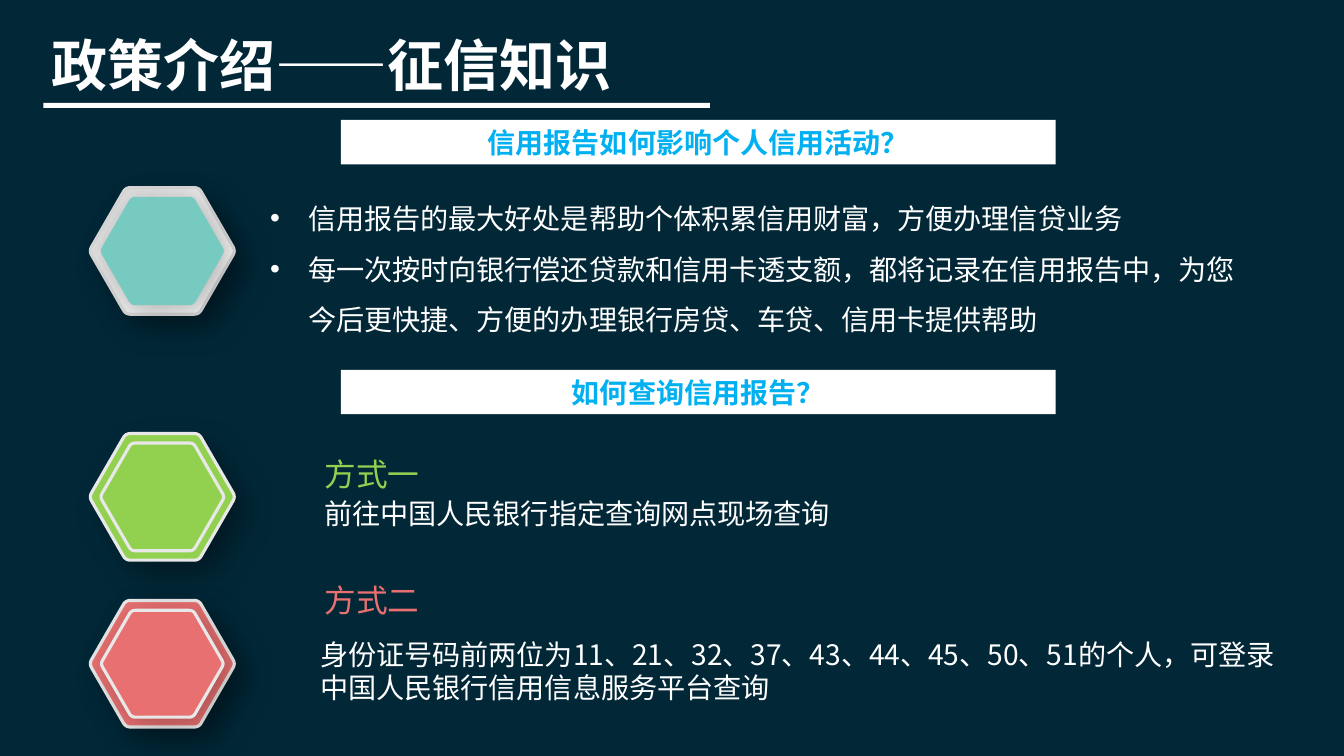
import math
import lxml.etree
import pptx
import pptx.dml.color
import pptx.enum.shapes
import pptx.enum.text
import pptx.oxml
import pptx.oxml.ns
import pptx.util

FONT = "Noto Sans CJK SC"
WHITE, BLUE, GREEN, RED, TEAL = "FFFFFF", "00B0F0", "92D050", "E87071", "77CAC0"
SILVER, PALE = "D9D9DA", "E8E8E8"
ALIGN = pptx.enum.text.PP_ALIGN
ANCHOR = pptx.enum.text.MSO_ANCHOR
qn = pptx.oxml.ns.qn


def color(value):
    return pptx.dml.color.RGBColor.from_string(value)


def write(shape, *texts, size, ink, bold=False, align=ALIGN.LEFT, anchor=ANCHOR.TOP,
          wrap=True, spacing=1.0, bullet=None):
    frame = shape.text_frame
    frame.word_wrap = wrap
    frame.vertical_anchor = anchor
    frame.auto_size = pptx.enum.text.MSO_AUTO_SIZE.SHAPE_TO_FIT_TEXT
    for index, text in enumerate(texts):
        paragraph = frame.add_paragraph() if index else frame.paragraphs[0]
        paragraph.alignment = align
        paragraph.line_spacing = spacing
        paragraph.space_before = pptx.util.Pt(0)
        if bullet:
            properties = paragraph._p.get_or_add_pPr()
            indent = pptx.util.Inches(0.38)
            properties.set("marL", str(indent))
            properties.set("indent", str(-indent))
            lxml.etree.SubElement(properties, qn("a:buFont")).set("typeface", "Arial")
            lxml.etree.SubElement(properties, qn("a:buChar")).set("char", bullet)
        run = paragraph.add_run()
        run.text = text
        run.font.size = pptx.util.Pt(size)
        run.font.bold = bold
        run.font.color.rgb = color(ink)
        run.font.name = FONT
        lxml.etree.SubElement(run._r.get_or_add_rPr(), qn("a:ea")).set("typeface", FONT)


presentation = pptx.Presentation()
presentation.slide_width = pptx.util.Inches(13.33)
presentation.slide_height = pptx.util.Inches(7.5)
column = presentation.slide_width / 100
row = presentation.slide_height / 100

slide = presentation.slides.add_slide(presentation.slide_layouts[1])
slide.background.fill.solid()
slide.background.fill.fore_color.rgb = color("022838")

title, body = slide.placeholders
for placeholder, (left, top, width, height) in (
    (title, (3.08, 3.33, 44.71, 10.27)),
    (body, (19.35, 23.73, 74.27, 21.6)),
):
    placeholder.left, placeholder.width = int(left * column), int(width * column)
    placeholder.top, placeholder.height = int(top * row), int(height * row)
write(title, "政策介绍——征信知识", size=40, ink=WHITE, bold=True)
write(
    body,
    "信用报告的最大好处是帮助个体积累信用财富，方便办理信贷业务",
    "每一次按时向银行偿还贷款和信用卡透支额，都将记录在信用报告中，为您今后更快捷、方便的办理银行房贷、车贷、信用卡提供帮助",
    size=20.1, ink=WHITE, spacing=1.5, bullet="•",
)

for left, top, width, height, heading in (
    (3.23, 13.6, 49.59, 0.67, None),
    (25.36, 15.87, 53.19, 5.87, "信用报告如何影响个人信用活动？"),
    (25.36, 48.93, 53.19, 5.87, "如何查询信用报告？"),
):
    bar = slide.shapes.add_shape(
        pptx.enum.shapes.MSO_SHAPE.RECTANGLE,
        int(left * column), int(top * row), int(width * column), int(height * row))
    bar.shadow.inherit = False
    bar.fill.solid()
    bar.fill.fore_color.rgb = color(WHITE)
    bar.line.fill.background()
    if heading:
        write(bar, heading, size=20, ink=BLUE, bold=True,
              align=ALIGN.CENTER, anchor=ANCHOR.MIDDLE)

center_x = 12.08 * column
corner_cut = 0.065
deep, soft = (35, 22, 13), (28, 22, 6)
for middle, layers in (
    (33.2, ((5.44, SILVER, SILVER, deep), (4.65, TEAL, None, soft))),
    (65.73, ((5.44, GREEN, PALE, deep), (4.63, GREEN, PALE, None))),
    (87.8, ((5.44, RED, PALE, deep), (4.59, RED, PALE, soft))),
):
    badge = slide.shapes.add_group_shape()
    for radius, fill, outline, shadow in layers:
        corners = [
            (center_x + radius * column * math.cos(math.radians(60 * step)),
             middle * row + radius * column * math.sin(math.radians(60 * step)))
            for step in range(6)
        ]
        points = []
        for step, corner in enumerate(corners):
            before, after = corners[step - 1], corners[(step + 1) % 6]
            for part in range(7):
                t = part / 6
                points.append(tuple(
                    c + corner_cut * ((1 - t) ** 2 * (b - c) + t ** 2 * (a - c))
                    for b, c, a in zip(before, corner, after)))
        builder = badge.shapes.build_freeform(*points[0], scale=1.0)
        builder.add_line_segments(points[1:], close=True)
        hexagon = builder.convert_to_shape()
        hexagon.shadow.inherit = False
        if fill == SILVER:
            hexagon.fill.gradient()
            hexagon.fill.gradient_angle = 315
            for stop, tint in zip(hexagon.fill.gradient_stops, (SILVER, WHITE)):
                stop.color.rgb = color(tint)
        else:
            hexagon.fill.solid()
            hexagon.fill.fore_color.rgb = color(fill)
        if outline:
            hexagon.line.color.rgb = color(outline)
            hexagon.line.width = pptx.util.Pt(2.25)
        else:
            hexagon.line.fill.background()
        if shadow:
            opacity, blur, distance = shadow
            effects = hexagon._element.spPr.find(qn("a:effectLst"))
            outer = lxml.etree.SubElement(effects, qn("a:outerShdw"))
            outer.set("blurRad", str(pptx.util.Pt(blur)))
            outer.set("dist", str(pptx.util.Pt(distance)))
            outer.set("dir", str(45 * 60000))
            outer.set("algn", "tl")
            outer.set("rotWithShape", "0")
            black = lxml.etree.SubElement(outer, qn("a:srgbClr"))
            black.set("val", "000000")
            lxml.etree.SubElement(black, qn("a:alpha")).set("val", str(opacity * 1000))

for left, top, width, height, text, size, ink, wrap in (
    (23.41, 59.47, 8.63, 6.4, "方式一", 22.6, GREEN, False),
    (23.41, 65.07, 51.31, 5.87, "前往中国人民银行指定查询网点现场查询", 20.1, WHITE, True),
    (23.41, 76.13, 8.63, 6.4, "方式二", 22.6, RED, False),
    (23.11, 83.6, 73.59, 10.4,
     "身份证号码前两位为11、21、32、37、43、44、45、50、51的个人，可登录中国人民银行信用信息服务平台查询",
     20.1, WHITE, True),
):
    box = slide.shapes.add_textbox(
        int(left * column), int(top * row), int(width * column), int(height * row))
    write(box, text, size=size, ink=ink, wrap=wrap)

presentation.save("out.pptx")
